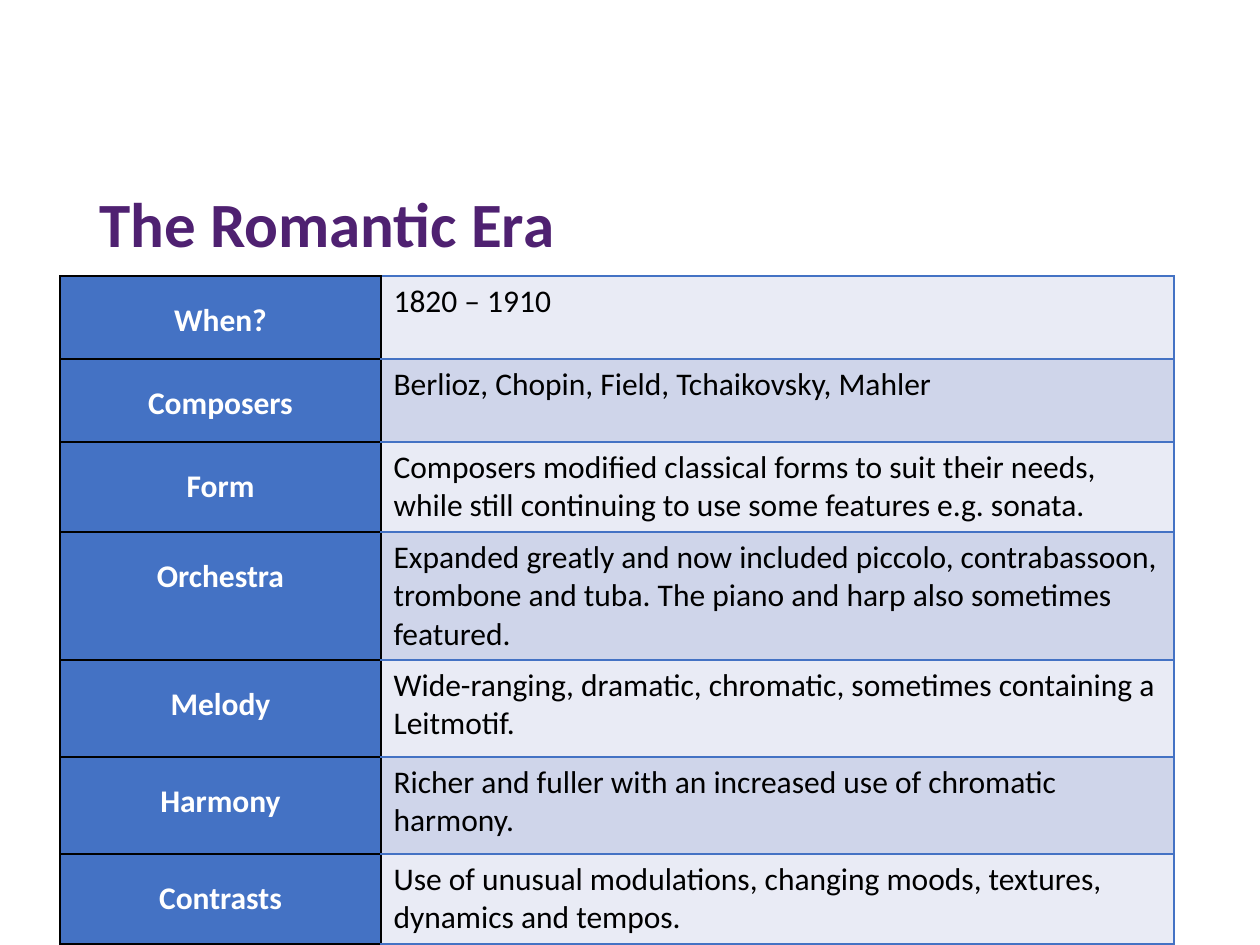
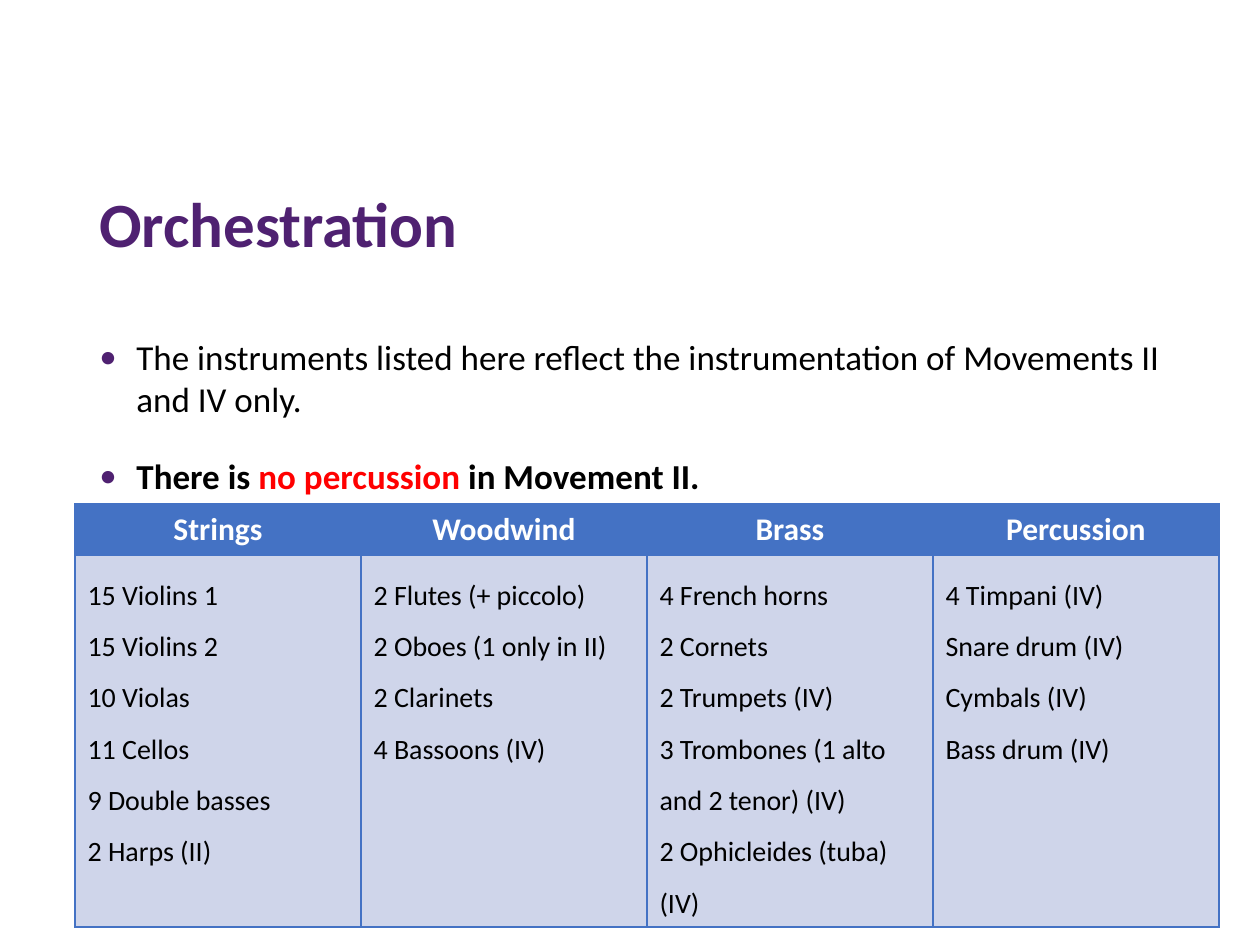
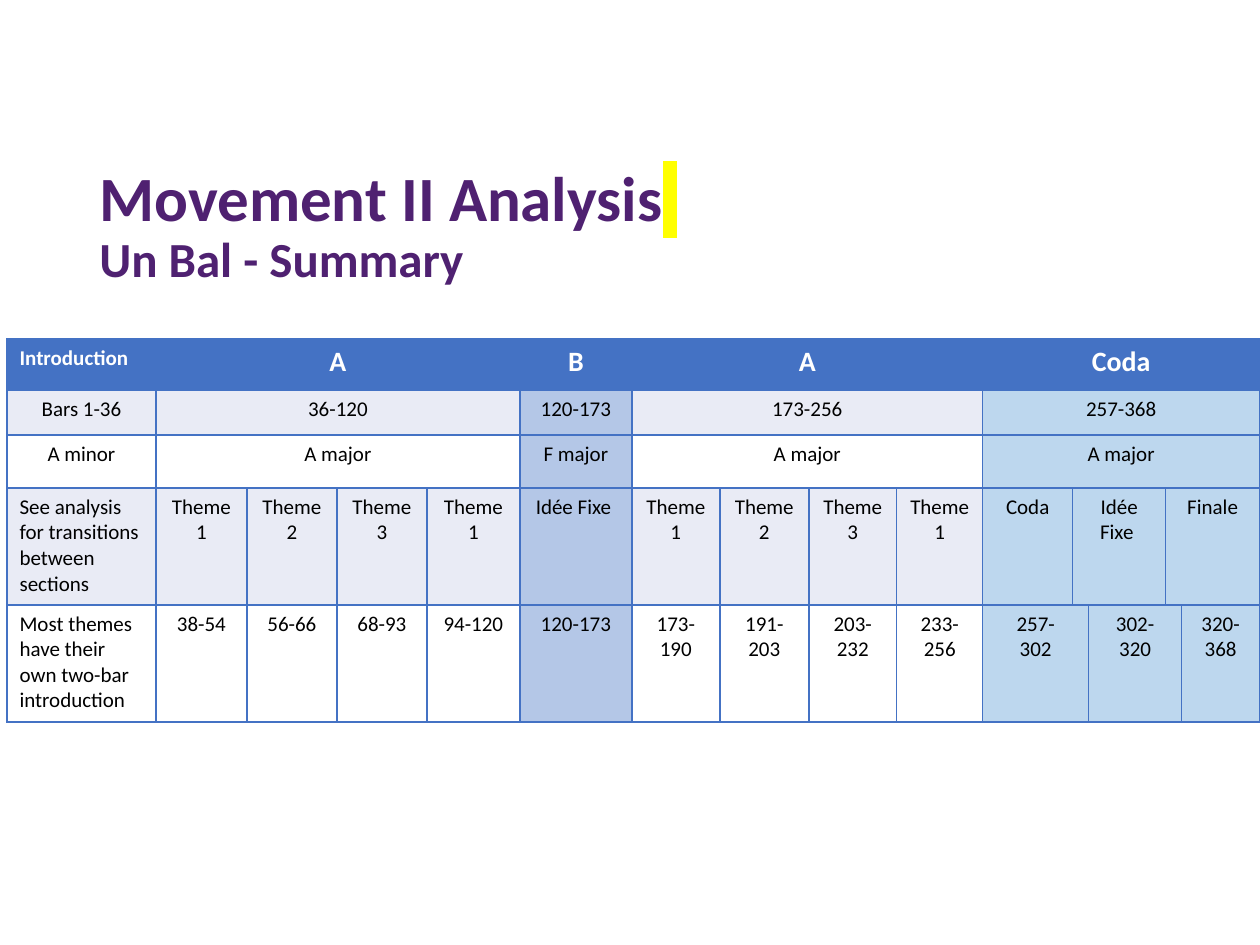
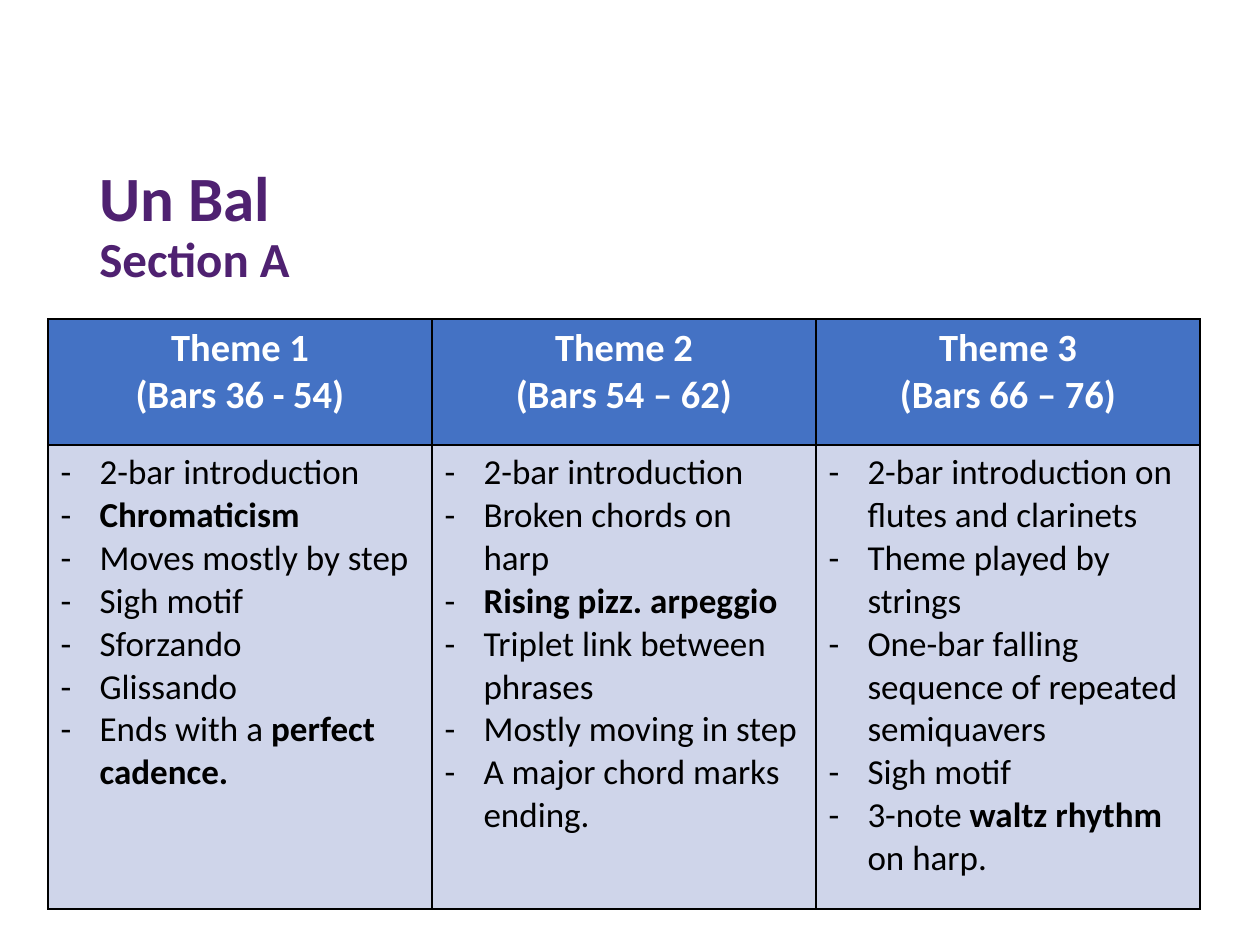
"""Build four slides on the Romantic era and the waltz movement."""
from dataclasses import dataclass, replace
from itertools import accumulate
from typing import Optional

from lxml.etree import SubElement
from pptx import Presentation
from pptx.dml.color import RGBColor
from pptx.enum.text import MSO_ANCHOR, PP_ALIGN
from pptx.oxml.ns import qn
from pptx.util import Emu, Pt

PURPLE = RGBColor(0x4F, 0x21, 0x71)
WHITE = RGBColor(0xFF, 0xFF, 0xFF)
BLACK = RGBColor(0x00, 0x00, 0x00)
RED = RGBColor(0xFF, 0x00, 0x00)
YELLOW = RGBColor(0xFF, 0xFF, 0x00)
BLUE = RGBColor(0x44, 0x72, 0xC4)
PALE = RGBColor(0xE9, 0xEB, 0xF5)
BAND = RGBColor(0xCF, 0xD5, 0xEA)
FIXE_BLUE = RGBColor(0xB4, 0xC7, 0xE7)
CODA_BLUE = RGBColor(0xBD, 0xD7, 0xEE)

FONT = "Calibri"
EMU_PER_PX = 914400 / 126
SLIDE_SIZE = (1260, 945)
TITLE_BOX = (87, 136, 1086, 183)
BODY_BOX = (87, 329, 1088, 600)
SIDES = ("L", "R", "T", "B")

ERA_TITLE = [("The Romantic Era", {})]
ERA_FACTS = [
    ("When?", "1820 – 1910"),
    ("Composers", "Berlioz, Chopin, Field, Tchaikovsky, Mahler"),
    ("Form", "Composers modified classical forms to suit their needs, while still "
             "continuing to use some features e.g. sonata."),
    ("Orchestra", "Expanded greatly and now included piccolo, contrabassoon, trombone "
                  "and tuba. The piano and harp also sometimes featured."),
    ("Melody", "Wide-ranging, dramatic, chromatic, sometimes containing a Leitmotif."),
    ("Harmony", "Richer and fuller with an increased use of chromatic harmony."),
    ("Contrasts", "Use of unusual modulations, changing moods, textures, dynamics "
                  "and tempos."),
]
ERA_COLUMNS = (321, 793)
ERA_ROWS = (83, 83, 90, 128, 97, 97, 90)

ORCHESTRA_TITLE = [("Orchestration", {})]
ORCHESTRA_NOTES = [
    [("The instruments listed here reflect the instrumentation of Movements II "
      "and IV only.", {})],
    [("There is ", {"bold": True}),
     ("no percussion ", {"bold": True, "color": RED}),
     ("in Movement II.", {"bold": True})],
]
ORCHESTRA = {
    "Strings": ["15 Violins 1", "15 Violins 2", "10 Violas", "11 Cellos",
                "9 Double basses", "2 Harps (II)"],
    "Woodwind": ["2 Flutes (+ piccolo)", "2 Oboes (1 only in II)", "2 Clarinets",
                 "4 Bassoons (IV)"],
    "Brass": ["4 French horns", "2 Cornets", "2 Trumpets (IV)",
              "3 Trombones (1 alto and 2 tenor) (IV)", "2 Ophicleides (tuba) (IV)"],
    "Percussion": ["4 Timpani (IV)", "Snare drum (IV)", "Cymbals (IV)",
                   "Bass drum (IV)"],
}

SUMMARY_TITLE = [
    ("Movement II Analysis", {}),
    (" \n", {"highlight": YELLOW}),
    ("Un Bal - Summary", {"size": 28}),
]
SECTION_SPANS = (1, 4, 1, 4, 5)
THEME_SPANS = (1,) * 11 + (2, 2)
BAR_SPANS = (1,) * 10 + (2, 2, 1)
SUMMARY = [
    (SECTION_SPANS, ["Introduction", "A", "B", "A", "Coda"]),
    (SECTION_SPANS, ["Bars 1-36", "36-120", "120-173", "173-256", "257-368"]),
    (SECTION_SPANS, ["A minor", "A major", "F major", "A major", "A major"]),
    (THEME_SPANS, ["See analysis for transitions between sections",
                   "Theme 1", "Theme 2", "Theme 3", "Theme 1", "Idée Fixe ",
                   "Theme 1", "Theme 2", "Theme 3", "Theme 1",
                   "Coda", "Idée Fixe ", "Finale"]),
    (BAR_SPANS, ["Most themes have their own two-bar introduction",
                 "38-54", "56-66", "68-93", "94-120", "120-173",
                 "173-190", "191-203", "203-232", "233-256",
                 "257-\n302", "302-320", "320-368"]),
]
SUMMARY_COLUMNS = (149, 91, 90, 90, 93, 112, 88, 89, 88, 86, 90, 16, 77, 16, 78)
SUMMARY_ROWS = (51, 45, 53, 117, 117)
FIXE_COLUMN, CODA_COLUMN = 5, 10

SECTION_TITLE = [("Un Bal \n", {}), ("Section A", {"size": 28})]
THEMES = {
    "Theme 1\n(Bars 36 - 54)": [
        "2-bar introduction", "*Chromaticism*", "Moves mostly by step", "Sigh motif",
        "Sforzando", "Glissando", "Ends with a *perfect cadence.*"],
    "Theme 2\n(Bars 54 – 62)": [
        "2-bar introduction", "Broken chords on harp", "*Rising pizz. arpeggio*",
        "Triplet link between phrases", "Mostly moving in step",
        "A major chord marks ending."],
    "Theme 3\n(Bars 66 – 76)": [
        "2-bar introduction on flutes and clarinets", "Theme played by strings",
        "One-bar falling sequence of repeated semiquavers", "Sigh motif",
        "3-note *waltz rhythm *on harp."],
}


@dataclass(frozen=True)
class Style:
    """Look of a paragraph and its runs."""
    size: int
    color: RGBColor = BLACK
    bold: bool = False
    highlight: Optional[RGBColor] = None
    align: PP_ALIGN = PP_ALIGN.LEFT
    spacing: float = 1.0
    gap: int = 0
    bullet: str = ""
    bullet_color: RGBColor = BLACK
    hang: int = 0


TITLE = Style(36, PURPLE, bold=True, spacing=0.9)
NOTE = Style(20, gap=10, bullet="•", bullet_color=PURPLE, hang=37)
HEAD = Style(18, WHITE, bold=True, align=PP_ALIGN.CENTER)
ERA_LABEL = replace(HEAD, spacing=1.5)
ERA_FACT = Style(18)
PLAYERS = Style(16, spacing=1.5)
SUMMARY_TEXT = Style(12)
THEME_HEAD = replace(HEAD, size=22)
THEME_POINT = Style(20, bullet="-", hang=39)


def px(length):
    return Emu(round(length * EMU_PER_PX))


def add_color(parent, tag, color):
    holder = SubElement(parent, qn(tag))
    SubElement(holder, qn("a:srgbClr")).set("val", str(color))
    return holder


def add_run(paragraph, text, style):
    run = paragraph.add_run()
    run.text = text
    run.font.size = Pt(style.size)
    run.font.bold = style.bold
    run.font.color.rgb = style.color
    if style.highlight is not None:
        add_color(run.font._element, "a:highlight", style.highlight)
    run.font.name = FONT


def add_bullet(paragraph, style):
    properties = paragraph._p.get_or_add_pPr()
    properties.set("marL", str(px(style.hang)))
    properties.set("indent", str(-px(style.hang)))
    add_color(properties, "a:buClr", style.bullet_color)
    SubElement(properties, qn("a:buFont")).set("typeface", FONT)
    SubElement(properties, qn("a:buChar")).set("char", style.bullet)


def write(frame, paragraphs, style):
    for index, runs in enumerate(paragraphs):
        paragraph = frame.add_paragraph() if index else frame.paragraphs[0]
        paragraph.alignment = style.align
        paragraph.line_spacing = style.spacing
        if style.gap:
            paragraph.space_before = Pt(style.gap if index else 0)
            paragraph.space_after = Pt(style.gap)
        if style.bullet:
            add_bullet(paragraph, style)
        for text, changes in runs:
            add_run(paragraph, text.rstrip("\n"), replace(style, **changes))
            if text.endswith("\n"):
                paragraph.add_line_break()


def marked(line):
    return [(piece, {"bold": True} if index % 2 else {})
            for index, piece in enumerate(line.split("*")) if piece]


def add_text(slide, box, paragraphs, style, anchor=MSO_ANCHOR.TOP):
    frame = slide.shapes.add_textbox(*map(px, box)).text_frame
    frame.word_wrap = True
    frame.vertical_anchor = anchor
    write(frame, paragraphs, style)


def add_slide(deck, title):
    slide = deck.slides.add_slide(deck.slide_layouts[6])
    add_text(slide, TITLE_BOX, [title], TITLE, MSO_ANCHOR.MIDDLE)
    return slide


def add_grid(slide, left, top, columns, rows):
    table = slide.shapes.add_table(
        len(rows), len(columns), px(left), px(top), px(sum(columns)), px(sum(rows))).table
    table.first_row = table.horz_banding = False
    for column, width in zip(table.columns, columns):
        column.width = px(width)
    for row, height in zip(table.rows, rows):
        row.height = px(height)
    return table


def paint(cell, fill, edges):
    cell.fill.solid()
    cell.fill.fore_color.rgb = fill
    properties = cell._tc.get_or_add_tcPr()
    for index, (side, color) in enumerate(zip(SIDES, edges)):
        line = SubElement(properties, qn("a:ln" + side))
        line.set("w", str(Pt(1)))
        add_color(line, "a:solidFill", color)
        properties.insert(index, line)


def fill_cell(cell, text, style, fill, edges):
    paint(cell, fill, edges)
    write(cell.text_frame, [marked(line) for line in text.split("\n")], style)


def add_lists(slide, left, top, width, rows, lists, head, body, edge):
    table = add_grid(slide, left, top, (width,) * len(lists), rows)
    for column, (heading, lines) in enumerate(lists.items()):
        fill_cell(table.cell(0, column), heading, head, BLUE, (edge,) * 4)
        fill_cell(table.cell(1, column), "\n".join(lines), body, BAND, (edge,) * 4)


def add_era(deck):
    table = add_grid(add_slide(deck, ERA_TITLE), 60, 276, ERA_COLUMNS, ERA_ROWS)
    for row, (label, fact) in enumerate(ERA_FACTS):
        fill_cell(table.cell(row, 0), label, ERA_LABEL, BLUE, (BLACK,) * 4)
        fill_cell(table.cell(row, 1), fact, ERA_FACT, BAND if row % 2 else PALE,
                  (BLACK, BLUE, BLUE, BLUE))


def add_orchestra(deck):
    slide = add_slide(deck, ORCHESTRA_TITLE)
    add_text(slide, BODY_BOX, ORCHESTRA_NOTES, NOTE)
    add_lists(slide, 75, 504, 286, (51, 372), ORCHESTRA, HEAD, PLAYERS, BLUE)


def summary_fill(row, column):
    if row == 0:
        return BLUE
    if column >= CODA_COLUMN:
        return CODA_BLUE
    if column == FIXE_COLUMN:
        return FIXE_BLUE
    return PALE if row % 2 else WHITE


def summary_style(row, column):
    if row == 0:
        return replace(HEAD, size=16) if column else replace(
            HEAD, size=12, align=PP_ALIGN.LEFT)
    centred = column > 0 or row < 3
    return replace(SUMMARY_TEXT, align=PP_ALIGN.CENTER) if centred else SUMMARY_TEXT


def add_summary(deck):
    table = add_grid(add_slide(deck, SUMMARY_TITLE), 7, 339,
                     SUMMARY_COLUMNS, SUMMARY_ROWS)
    for row, (spans, texts) in enumerate(SUMMARY):
        starts = accumulate(spans[:-1], initial=0)
        for column, span, text in zip(starts, spans, texts):
            first = table.cell(row, column)
            if span > 1:
                first.merge(table.cell(row, column + span - 1))
            fill = summary_fill(row, column)
            fill_cell(first, text, summary_style(row, column), fill, (BLUE,) * 4)
            for covered in range(column + 1, column + span):
                paint(table.cell(row, covered), fill, (BLUE,) * 4)


def add_section(deck):
    add_lists(add_slide(deck, SECTION_TITLE), 48, 319, 384, (126, 464), THEMES,
              THEME_HEAD, THEME_POINT, BLACK)


def main():
    deck = Presentation()
    deck.slide_width, deck.slide_height = map(px, SLIDE_SIZE)
    for add_part in (add_era, add_orchestra, add_summary, add_section):
        add_part(deck)
    deck.save("out.pptx")


if __name__ == "__main__":
    main()
